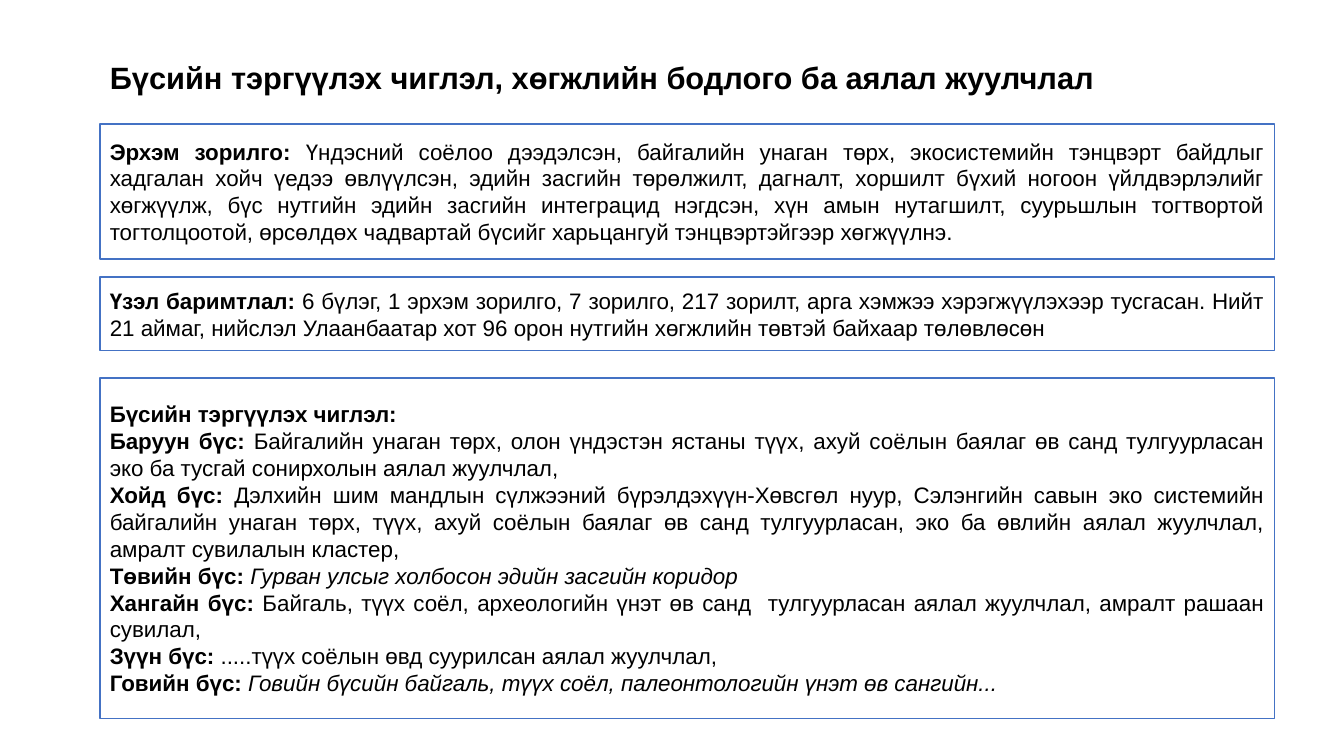
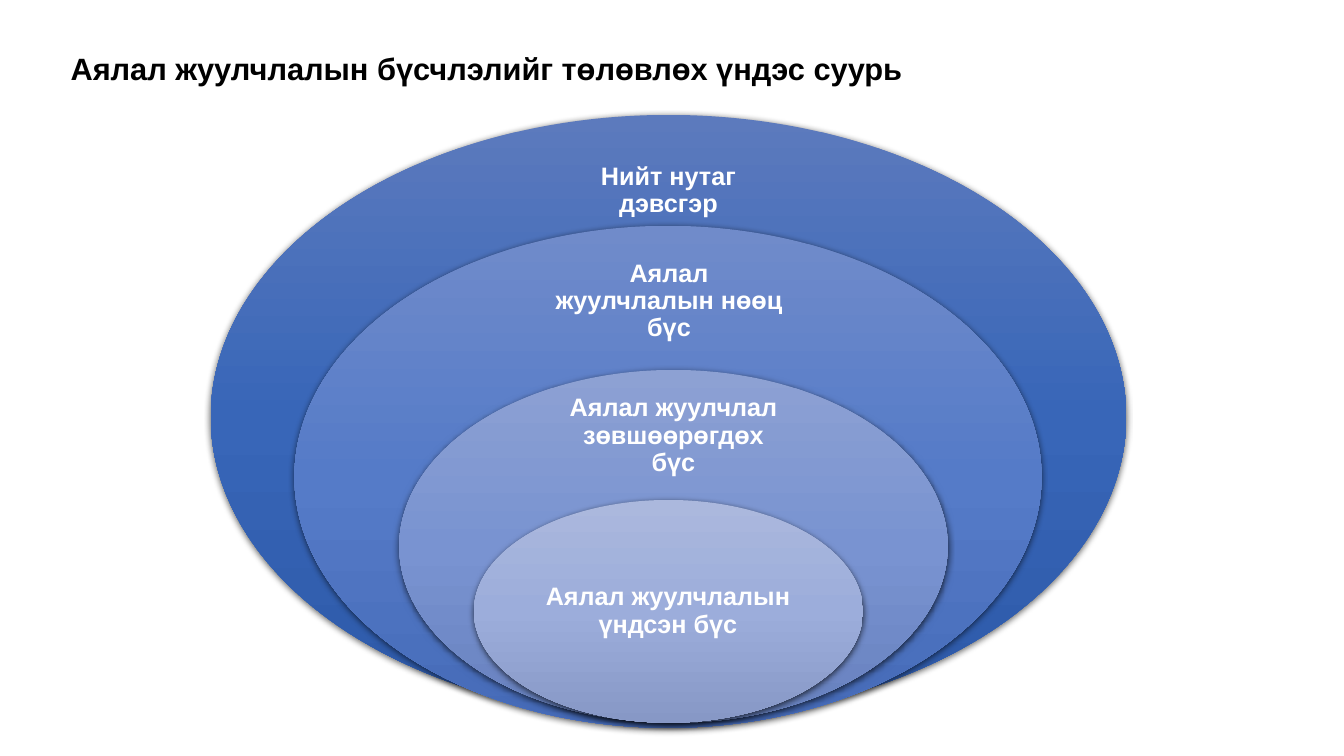
"""Build two slides on regional tourism policy and tourism zoning."""
from copy import deepcopy
from dataclasses import dataclass

from lxml.etree import SubElement
from pptx import Presentation
from pptx.dml.color import RGBColor
from pptx.enum.shapes import MSO_SHAPE
from pptx.enum.text import MSO_ANCHOR, MSO_AUTO_SIZE, PP_ALIGN
from pptx.oxml.ns import qn
from pptx.util import Inches, Pt


@dataclass(frozen=True)
class Theme:
    font: str = "Arial"
    black: RGBColor = RGBColor(0, 0, 0)
    white: RGBColor = RGBColor(255, 255, 255)
    border: RGBColor = RGBColor.from_string("4472C4")
    title: Pt = Pt(22)
    body: Pt = Pt(16)
    label: Pt = Pt(18)


T = Theme()


def style(p, size, color, align, bold=None, spacing=None):
    p.font.name, p.font.size, p.font.bold = T.font, size, bold
    p.font.color.rgb = color
    p.alignment, p.line_spacing = align, spacing


def add_slide(title, left, top, width):
    s = prs.slides.add_slide(prs.slide_layouts[5])
    sp = s.shapes.title
    sp.left, sp.top, sp.width, sp.height = [Inches(v) for v in (left, top, width, 0.73)]
    tf = sp.text_frame
    tf.text = title
    tf.auto_size = MSO_AUTO_SIZE.NONE
    tf.vertical_anchor = MSO_ANCHOR.MIDDLE
    style(tf.paragraphs[0], T.title, T.black, PP_ALIGN.LEFT, True, 0.9)
    return s


prs = Presentation()
prs.slide_width, prs.slide_height = Inches(13.33), Inches(7.5)

s = add_slide("Бүсийн тэргүүлэх чиглэл, хөгжлийн бодлого ба аялал жуулчлал", 0.99, 0.42, 10.58)
boxes = [
    (1.23, 1.34, [
        ("Эрхэм зорилго: ",
         "Үндэсний соёлоо дээдэлсэн, байгалийн унаган төрх, экосистемийн тэнцвэрт байдлыг "
         "хадгалан хойч үедээ өвлүүлсэн, эдийн засгийн төрөлжилт, дагналт, хоршилт бүхий ногоон "
         "үйлдвэрлэлийг хөгжүүлж, бүс нутгийн эдийн засгийн интеграцид нэгдсэн, хүн амын "
         "нутагшилт, суурьшлын тогтвортой тогтолцоотой, өрсөлдөх чадвартай бүсийг харьцангуй "
         "тэнцвэртэйгээр хөгжүүлнэ.", False),
    ]),
    (2.75, 0.73, [
        ("Үзэл баримтлал: ",
         "6 бүлэг, 1 эрхэм зорилго, 7 зорилго, 217 зорилт, арга хэмжээ хэрэгжүүлэхээр тусгасан. "
         "Нийт 21 аймаг, нийслэл Улаанбаатар хот 96 орон нутгийн хөгжлийн төвтэй байхаар "
         "төлөвлөсөн", False),
    ]),
    (3.75, 3.38, [
        ("Бүсийн тэргүүлэх чиглэл:", "", False),
        ("Баруун бүс: ",
         "Байгалийн унаган төрх, олон үндэстэн ястаны түүх, ахуй соёлын баялаг өв санд "
         "тулгуурласан эко ба тусгай сонирхолын аялал жуулчлал,", False),
        ("Хойд бүс: ",
         "Дэлхийн шим мандлын сүлжээний бүрэлдэхүүн-Хөвсгөл нуур, Сэлэнгийн савын эко системийн "
         "байгалийн унаган төрх, түүх, ахуй соёлын баялаг өв санд тулгуурласан, эко ба өвлийн "
         "аялал жуулчлал, амралт сувилалын кластер,", False),
        ("Төвийн бүс: ", "Гурван улсыг холбосон эдийн засгийн коридор", True),
        ("Хангайн бүс: ",
         "Байгаль, түүх соёл, археологийн үнэт өв санд  тулгуурласан аялал жуулчлал, амралт "
         "рашаан сувилал,", False),
        ("Зүүн бүс: ", ".....түүх соёлын өвд суурилсан аялал жуулчлал,", False),
        ("Говийн бүс: ",
         "Говийн бүсийн байгаль, түүх соёл, палеонтологийн үнэт өв сангийн...", True),
    ]),
]
for top, height, entries in boxes:
    sp = s.shapes.add_shape(MSO_SHAPE.RECTANGLE, Inches(0.99), Inches(top), Inches(11.65), Inches(height))
    sp.shadow.inherit = False
    sp.fill.solid()
    sp.fill.fore_color.rgb = T.white
    sp.line.color.rgb = T.border
    sp.line.width = Pt(1)
    tf = sp.text_frame
    tf.vertical_anchor = MSO_ANCHOR.MIDDLE
    for i, (heading, detail, italic) in enumerate(entries):
        p = tf.add_paragraph() if i else tf.paragraphs[0]
        style(p, T.body, T.black, PP_ALIGN.JUSTIFY)
        r = p.add_run()
        r.text, r.font.bold = heading, True
        if detail:
            r = p.add_run()
            r.text, r.font.italic = detail, italic

s = add_slide("Аялал жуулчлалын бүсчлэлийг төлөвлөх үндэс суурь", 0.6, 0.33, 9.81)
zones = [
    ("Нийт нутаг дэвсгэр", (2.09, 1.14, 9.08, 5.99), (5.36, 1.44, 2.54, 0.9),
     ("5C7ABD", "3866B8", "2D59A8")),
    ("Аялал жуулчлалын нөөц бүс", (2.92, 2.24, 7.41, 4.98), (5.34, 2.54, 2.59, 0.9),
     ("708BCA", "557BC8", "466BB8")),
    ("Аялал жуулчлал зөвшөөрөгдөх бүс", (3.96, 3.67, 5.44, 3.5), (5.41, 3.93, 2.54, 0.79),
     ("8DA1D3", "7993D1", "6781BE")),
    ("Аялал жуулчлалын үндсэн бүс", (4.7, 4.96, 3.86, 2.21), (5.26, 5.51, 2.73, 1.11),
     ("ABB8DD", "9CADDB", "8798C6")),
]
for label, oval, box, colors in zones:
    sp = s.shapes.add_shape(MSO_SHAPE.OVAL, *[Inches(v) for v in oval])
    sp.line.fill.background()
    sp.fill.gradient()
    sp.fill.gradient_angle = 270
    sppr = sp.element.spPr
    stops = sppr.find(".//" + qn("a:gsLst"))
    stops.append(deepcopy(stops[0]))
    for i, stop in enumerate(sp.fill.gradient_stops):
        stop.position = i / 2
        stop.color.rgb = RGBColor.from_string(colors[i])
    sp.shadow.inherit = False
    shadow = SubElement(sppr.find(qn("a:effectLst")), qn("a:outerShdw"), blurRad=str(Pt(4.5)),
                        dist=str(Pt(1.5)), dir="5400000", algn="ctr", rotWithShape="0")
    color = SubElement(shadow, qn("a:srgbClr"), val=str(T.black))
    SubElement(color, qn("a:alpha"), val="63000")

    tb = s.shapes.add_textbox(*[Inches(v) for v in box])
    tf = tb.text_frame
    tf.word_wrap = True
    tf.vertical_anchor = MSO_ANCHOR.MIDDLE
    tf.margin_left = tf.margin_right = tf.margin_top = tf.margin_bottom = Inches(0.14)
    tf.text = label
    style(tf.paragraphs[0], T.label, T.white, PP_ALIGN.CENTER, True, 0.9)

prs.save("out.pptx")
